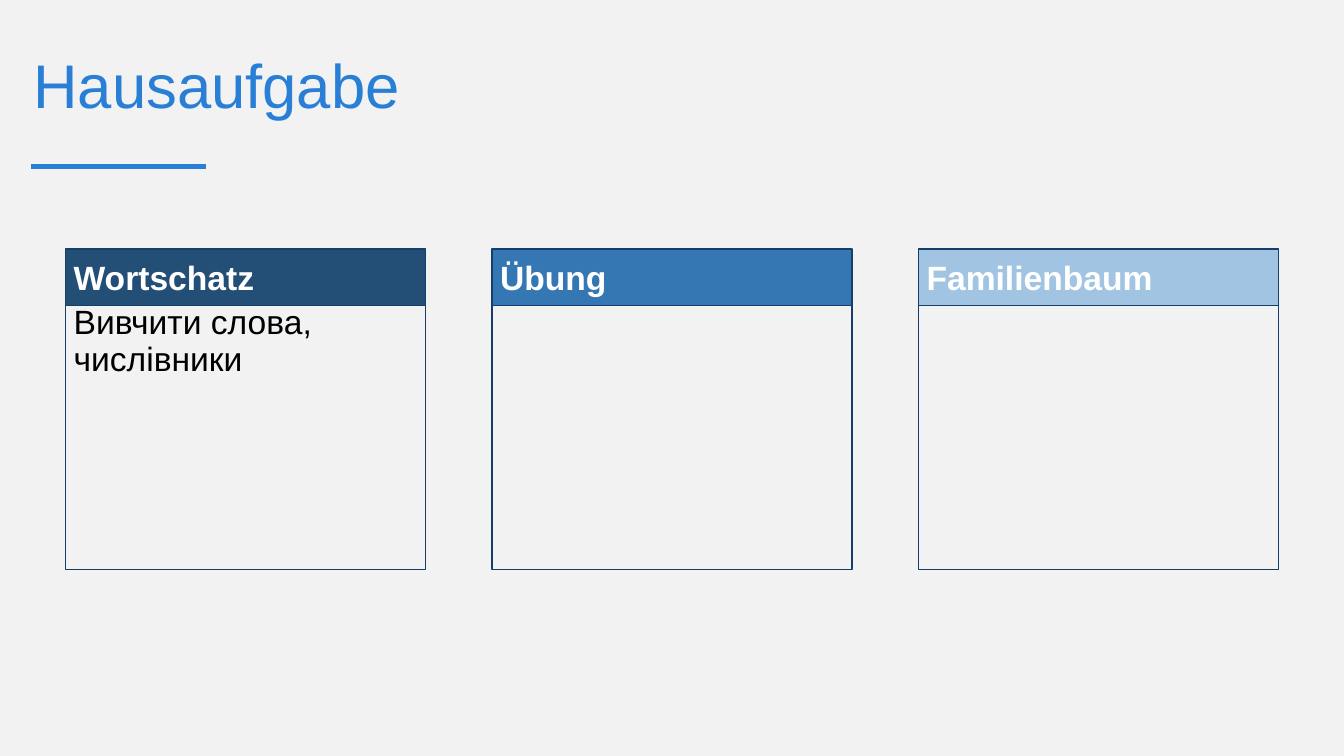
from lxml.etree import SubElement
from pptx import Presentation
from pptx.dml.color import RGBColor
from pptx.enum.shapes import MSO_CONNECTOR as Connector, MSO_SHAPE as Shape
from pptx.enum.text import MSO_ANCHOR as Anchor, MSO_AUTO_SIZE as AutoSize, PP_ALIGN as Align
from pptx.oxml.ns import qn
from pptx.util import Inches, Pt

PAPER = RGBColor(0xF2, 0xF2, 0xF2)
ACCENT = RGBColor(0x29, 0x7F, 0xD5)
OUTLINE = RGBColor(0x14, 0x3F, 0x6A)
NAVY = RGBColor(0x23, 0x4F, 0x77)
BLUE = RGBColor(0x34, 0x77, 0xB2)
SKY = RGBColor(0xA1, 0xC4, 0xE3)
WHITE = RGBColor(0xFF, 0xFF, 0xFF)
BLACK = RGBColor(0x00, 0x00, 0x00)

CARDS = [
    ("Wortschatz", NAVY, ["Вивчити слова, числівники"]),
    ("Übung", BLUE, []),
    ("Familienbaum", SKY, []),
]
CARD_LEFT, CARD_PITCH, CARD_WIDTH = 4.88, 31.73, 26.78
CARD_TOP, HEADER_HEIGHT, BODY_HEIGHT = 32.93, 7.47, 34.93


def write(paragraph, text, size=24, color=BLACK, bold=False, spacing=None, before=None):
    run = paragraph.add_run()
    run.text = text
    run.font.name = "Arial"
    run.font.size = Pt(size)
    run.font.bold = bold
    run.font.color.rgb = color
    paragraph.alignment = Align.LEFT
    paragraph.line_spacing = spacing
    paragraph.space_before = before


class HomeworkSlide:
    """Draws styled elements on one slide, placed in percent of its size."""

    def __init__(self, deck):
        self.deck = deck
        self.slide = deck.slides.add_slide(deck.slide_layouts[5])
        self.slide.background.fill.solid()
        self.slide.background.fill.fore_color.rgb = PAPER

    def x(self, share):
        return round(self.deck.slide_width * share / 100)

    def y(self, share):
        return round(self.deck.slide_height * share / 100)

    def box(self, left, top, width, height):
        return self.x(left), self.y(top), self.x(width), self.y(height)

    def title(self, text, *place):
        heading = self.slide.shapes.title
        heading.left, heading.top, heading.width, heading.height = self.box(*place)
        frame = heading.text_frame
        frame.word_wrap = False
        frame.auto_size = AutoSize.SHAPE_TO_FIT_TEXT
        frame.vertical_anchor = Anchor.TOP
        write(frame.paragraphs[0], text, size=44, color=ACCENT)

    def rule(self, start, end, level):
        underline = self.slide.shapes.add_connector(
            Connector.STRAIGHT, self.x(start), self.y(level), self.x(end), self.y(level))
        underline.line.color.rgb = ACCENT
        underline.line.width = Pt(4)
        SubElement(underline._element.spPr, qn("a:effectLst"))

    def panel(self, fill, *place):
        panel = self.slide.shapes.add_shape(Shape.RECTANGLE, *self.box(*place))
        panel.shadow.inherit = False
        panel.fill.solid()
        panel.fill.fore_color.rgb = fill
        panel.line.color.rgb = OUTLINE
        panel.line.width = Pt(1)

    def text(self, heading, tasks, *place):
        frame = self.slide.shapes.add_textbox(*self.box(*place)).text_frame
        frame.word_wrap = True
        frame.margin_left = frame.margin_right = frame.margin_top = frame.margin_bottom = 0
        layout = {"spacing": 0.9, "before": Pt(6)}
        write(frame.paragraphs[0], heading, color=WHITE, bold=True, **layout)
        for task in tasks:
            write(frame.add_paragraph(), task, **layout)

    def card(self, column, heading, fill, tasks):
        left = CARD_LEFT + column * CARD_PITCH
        self.panel(PAPER, left, CARD_TOP + HEADER_HEIGHT, CARD_WIDTH, BODY_HEIGHT)
        self.panel(fill, left, CARD_TOP, CARD_WIDTH, HEADER_HEIGHT)
        self.text(heading, tasks, left + 0.6, CARD_TOP + 1.6, 26.26, 48.13)


def main():
    deck = Presentation()
    deck.slide_width, deck.slide_height = Inches(13.33), Inches(7.5)
    homework = HomeworkSlide(deck)
    homework.title("Hausaufgabe", 1.73, 5.6, 30.38, 11.2)
    homework.rule(2.33, 15.3, 22)
    for column, card in enumerate(CARDS):
        homework.card(column, *card)
    deck.save("out.pptx")


if __name__ == "__main__":
    main()
